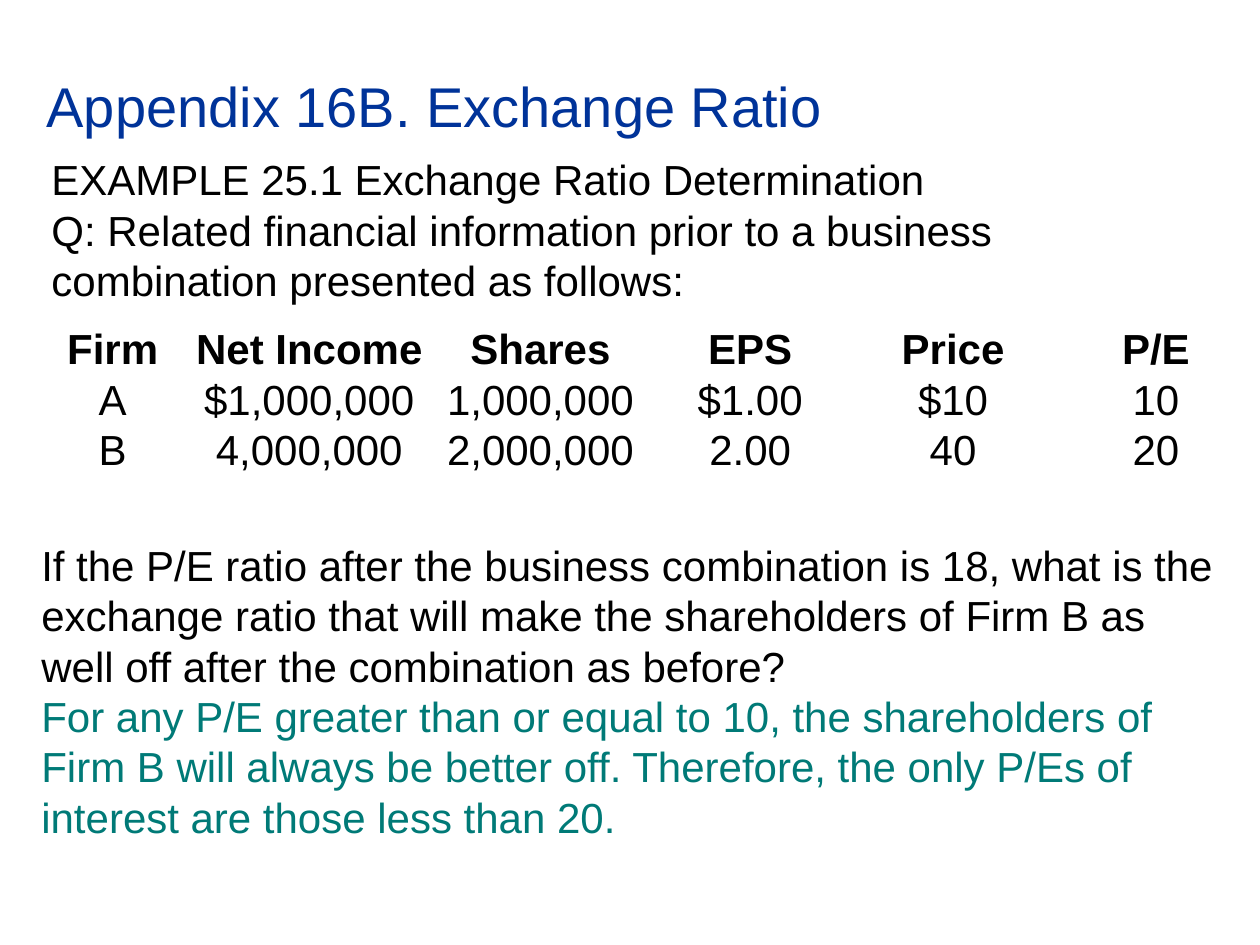
from dataclasses import dataclass

from pptx import Presentation
from pptx.dml.color import RGBColor
from pptx.enum.text import MSO_ANCHOR, MSO_AUTO_SIZE, PP_ALIGN
from pptx.util import Inches, Pt


@dataclass(frozen=True)
class Theme:
    font: str = "Arial"
    title_size: int = 32
    body_size: int = 24
    title: str = "003399"
    text: str = "000000"
    answer: str = "007A77"


theme = Theme()


def style(para, size, color, bold=False, align=PP_ALIGN.LEFT):
    para.alignment = align
    para.font.name = theme.font
    para.font.size = Pt(size)
    para.font.bold = bold
    para.font.color.rgb = RGBColor.from_string(color)


def add_text(slide, position, lines, anchor):
    box = slide.shapes.add_textbox(*map(Inches, position))
    frame = box.text_frame
    frame.word_wrap = True
    frame.auto_size = MSO_AUTO_SIZE.SHAPE_TO_FIT_TEXT
    frame.vertical_anchor = anchor
    frame.text = "\n".join(text for text, color in lines)
    for para, (text, color) in zip(frame.paragraphs, lines):
        style(para, theme.body_size, color)


deck = Presentation()
deck.slide_width = Inches(10)
deck.slide_height = Inches(7.5)
slide = deck.slides.add_slide(deck.slide_layouts[5])

title = slide.shapes.title
title.left, title.top, title.width, title.height = map(Inches, (0.27, 0.21, 9.34, 1.25))
title.text_frame.text = "Appendix 16B. Exchange Ratio"
title.text_frame.vertical_anchor = MSO_ANCHOR.MIDDLE
style(title.text_frame.paragraphs[0], theme.title_size, theme.title)

add_text(slide, (0.31, 1.17, 8.44, 1.31), [
    ("EXAMPLE 25.1 Exchange Ratio Determination", theme.text),
    ("Q: Related financial information prior to a business combination "
     "presented as follows:", theme.text),
], MSO_ANCHOR.TOP)

firms = [
    ("Firm", "Net Income", "Shares", "EPS", "Price", "P/E"),
    ("A", "$1,000,000", "1,000,000", "$1.00", "$10", "10"),
    ("B", "4,000,000", "2,000,000", "2.00", "40", "20"),
]
column_widths = [1.17, 1.95, 1.72, 1.61, 1.61, 1.61]
table = slide.shapes.add_table(
    len(firms), len(column_widths),
    Inches(0.31), Inches(2.58), Inches(sum(column_widths)), Inches(1.2),
).table
table.first_row = False
table.horz_banding = False
for column, width in zip(table.columns, column_widths):
    column.width = Inches(width)
for row_index, firm in enumerate(firms):
    for column_index, value in enumerate(firm):
        cell = table.cell(row_index, column_index)
        cell.fill.background()
        cell.margin_left = cell.margin_right = Inches(0.07)
        cell.margin_top = cell.margin_bottom = Inches(0)
        cell.vertical_anchor = MSO_ANCHOR.MIDDLE
        cell.text = value
        style(cell.text_frame.paragraphs[0], theme.body_size, theme.text,
              bold=row_index == 0, align=PP_ALIGN.CENTER)

add_text(slide, (0.23, 4.22, 9.53, 2.52), [
    ("If the P/E ratio after the business combination is 18, what is the "
     "exchange ratio that will make the shareholders of Firm B as well off "
     "after the combination as before?", theme.text),
    ("For any P/E greater than or equal to 10, the shareholders of Firm B "
     "will always be better off. Therefore, the only P/Es of interest are "
     "those less than 20.", theme.answer),
], MSO_ANCHOR.MIDDLE)

deck.save("out.pptx")
